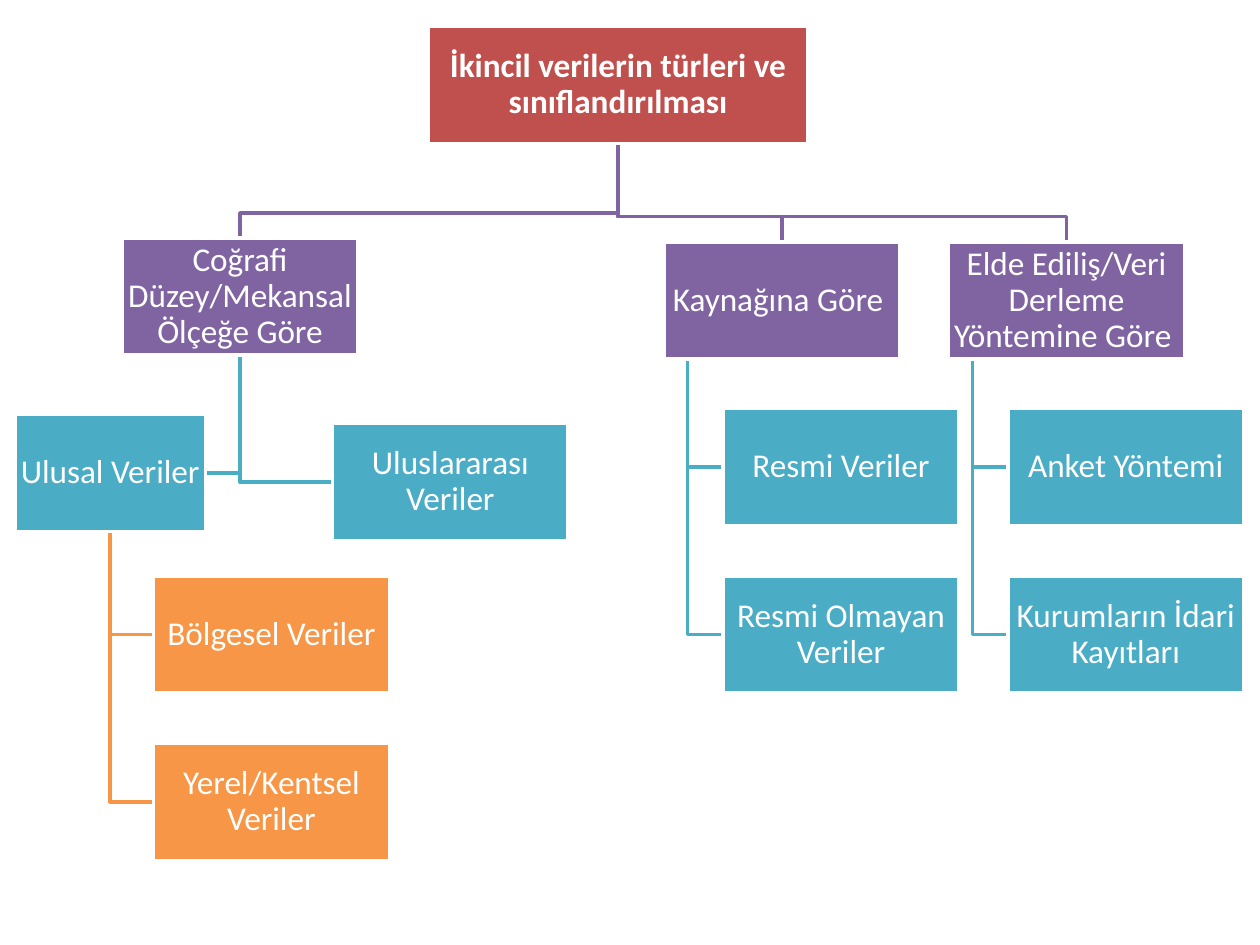
from dataclasses import dataclass

from pptx import Presentation
from pptx import util as u
from pptx.dml.color import RGBColor
from pptx.enum import shapes, text


@dataclass(frozen=True)
class Theme:
    root: str = "C0504D"
    group: str = "8064A2"
    kind: str = "4BACC6"
    detail: str = "F79646"
    light: str = "FFFFFF"
    font: str = "Calibri"
    size: int = 19
    line: int = 2


theme = Theme()
BOX_WIDTH, BOX_HEIGHT = 1.87, 0.93
BUS_GAP = 0.2       # from the horizontal line down to a child box
STEM_SHARE = 0.1    # stem position across a parent whose children hang on the right
INSET = 0.01

# Boxes: key -> text, colour, left, top, width
boxes = {
    "root": ("İkincil verilerin türleri ve sınıflandırılması", theme.root, 3.4, 0.21, 3.01),
    "scale": ("Coğrafi Düzey/Mekansal Ölçeğe Göre", theme.group, 0.97, 1.89, BOX_WIDTH),
    "national": ("Ulusal Veriler", theme.kind, 0.12, 3.29, 1.51),
    "regional": ("Bölgesel Veriler", theme.detail, 1.22, 4.57, BOX_WIDTH),
    "local": ("Yerel/Kentsel Veriler", theme.detail, 1.22, 5.9, BOX_WIDTH),
    "international": ("Uluslararası Veriler", theme.kind, 2.64, 3.36, BOX_WIDTH),
    "source": ("Kaynağına Göre ", theme.group, 5.27, 1.92, BOX_WIDTH),
    "official": ("Resmi Veriler", theme.kind, 5.74, 3.24, BOX_WIDTH),
    "unofficial": ("Resmi Olmayan Veriler", theme.kind, 5.74, 4.57, BOX_WIDTH),
    "method": ("Elde Ediliş/Veri Derleme Yöntemine Göre ", theme.group, 7.53, 1.92, BOX_WIDTH),
    "survey": ("Anket Yöntemi", theme.kind, 8, 3.24, BOX_WIDTH),
    "records": ("Kurumların İdari Kayıtları", theme.kind, 8, 4.57, BOX_WIDTH),
}

# Branches: parent, stem position as a share of its width, children
branches = [
    ("method", STEM_SHARE, ["records", "survey"]),
    ("source", STEM_SHARE, ["unofficial", "official"]),
    ("scale", 0.5, ["international", "national"]),
    ("national", 0.5, ["local", "regional"]),
    ("root", 0.5, ["method", "source", "scale"]),
]

presentation = Presentation()
presentation.slide_width, presentation.slide_height = u.Inches(10), u.Inches(7.5)
slide = presentation.slides.add_slide(presentation.slide_layouts[5])

# Elbow lines, behind the boxes
for parent, share, children in branches:
    _, _, left, top, width = boxes[parent]
    stem, start = left + width * share, top + BOX_HEIGHT
    for child in children:
        _, colour, child_left, child_top, child_width = boxes[child]
        if parent == "root":
            centre, bus = child_left + child_width / 2, child_top - BUS_GAP
            points = [(stem, bus), (centre, bus), (centre, child_top)]
        else:
            middle = child_top + BOX_HEIGHT / 2
            side = child_left if child_left > stem else child_left + child_width
            points = [(stem, middle), (side, middle)]
        builder = slide.shapes.build_freeform(u.Inches(stem), u.Inches(start))
        builder.add_line_segments([(u.Inches(x), u.Inches(y)) for x, y in points], close=False)
        elbow = builder.convert_to_shape()
        elbow.shadow.inherit = False
        elbow.fill.background()
        elbow.line.color.rgb = RGBColor.from_string(colour)
        elbow.line.width = u.Pt(theme.line)

# Boxes; the root is the slide title
for key, (label, colour, left, top, width) in boxes.items():
    place = [u.Inches(value) for value in (left, top, width, BOX_HEIGHT)]
    if key == "root":
        shape = slide.shapes.title
        shape.left, shape.top, shape.width, shape.height = place
        slide.shapes._spTree.append(shape._element)  # in front of the lines
    else:
        shape = slide.shapes.add_shape(shapes.MSO_SHAPE.RECTANGLE, *place)
        shape.shadow.inherit = False
    shape.fill.solid()
    shape.fill.fore_color.rgb = RGBColor.from_string(colour)
    shape.line.color.rgb = RGBColor.from_string(theme.light)
    shape.line.width = u.Pt(theme.line)

    frame = shape.text_frame
    frame.word_wrap = True
    frame.auto_size = text.MSO_AUTO_SIZE.NONE
    frame.vertical_anchor = text.MSO_ANCHOR.MIDDLE
    frame.margin_left = frame.margin_right = u.Inches(INSET)
    frame.margin_top = frame.margin_bottom = u.Inches(INSET)
    paragraph = frame.paragraphs[0]
    paragraph.alignment = text.PP_ALIGN.CENTER
    paragraph.line_spacing = 0.9
    run = paragraph.add_run()
    run.text = label
    run.font.name = theme.font
    run.font.size = u.Pt(theme.size)
    run.font.bold = key == "root"
    run.font.color.rgb = RGBColor.from_string(theme.light)

presentation.save("out.pptx")
